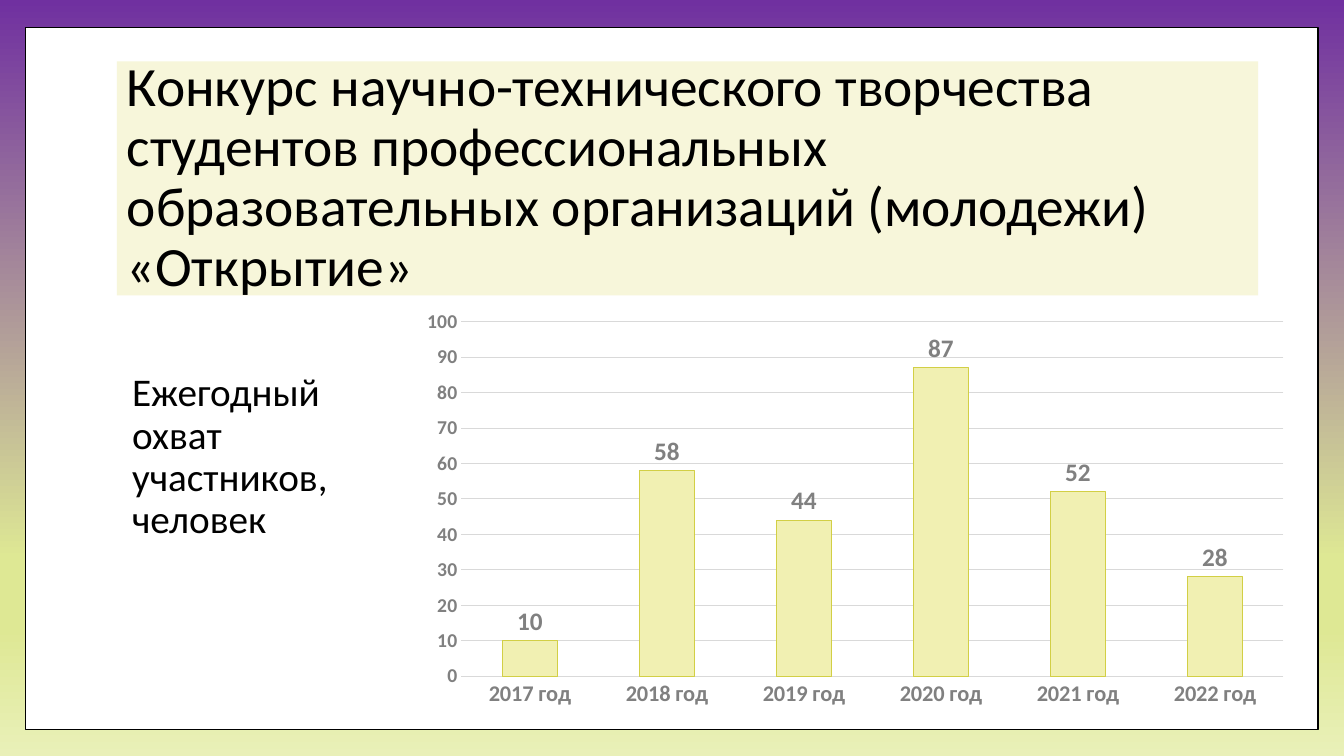
from lxml import etree
from pptx import Presentation
from pptx import util as u
from pptx.chart.data import CategoryChartData
from pptx.dml.color import RGBColor
from pptx.enum import chart as ch, shapes, text
from pptx.oxml import parse_xml

BLACK = RGBColor(0x00, 0x00, 0x00)
WHITE = RGBColor(0xFF, 0xFF, 0xFF)
CREAM = RGBColor(0xF7, 0xF6, 0xDA)
BAR = RGBColor(0xF1, 0xF0, 0xB2)
BAR_EDGE = RGBColor(0xD2, 0xCF, 0x45)
GRAY = RGBColor(0x80, 0x80, 0x80)
GRID = RGBColor(0xD9, 0xD9, 0xD9)
PURPLE = RGBColor(0x70, 0x30, 0xA0)
LIME = RGBColor(0xDE, 0xE8, 0x94)
PALE_LIME = RGBColor(0xE9, 0xF0, 0xB8)
FONT = "Calibri"

prs = Presentation()
prs.slide_width, prs.slide_height = u.Inches(13.33), u.Inches(7.5)
s = prs.slides.add_slide(prs.slide_layouts[6])
COL, ROW = prs.slide_width / 160, prs.slide_height / 90
LEFT, TOP, WIDE, LOWER = 13.92, 7.32, 135.87, 35.88


def cells(col, row, cols, rows):
    return int(col * COL), int(row * ROW), int(cols * COL), int(rows * ROW)


def style(font, size, color, bold=False):
    font.name, font.size, font.bold = FONT, u.Pt(size), bold
    font.color.rgb = color


fill = s.background.fill
fill.gradient()
fill.gradient_angle = 270
stops = s.background._cSld.find(".//{*}gsLst")
for gs in list(stops):
    stops.remove(gs)
ns = "http://schemas.openxmlformats.org/drawingml/2006/main"
for pos, color in [(0, PURPLE), (74, LIME), (83, LIME), (100, PALE_LIME)]:
    stops.append(parse_xml(
        f'<a:gs xmlns:a="{ns}" pos="{pos * 1000}"><a:srgbClr val="{color}"/></a:gs>'))

sp = s.shapes.add_shape(shapes.MSO_SHAPE.RECTANGLE, *cells(3, 3.25, 153.9, 83.6))
sp.shadow.inherit = False
sp.fill.solid()
sp.fill.fore_color.rgb = WHITE
sp.line.color.rgb = BLACK
sp.line.width = u.Pt(1)

sp = s.shapes.add_textbox(*cells(LEFT, TOP, WIDE, 27.84))
sp.fill.solid()
sp.fill.fore_color.rgb = CREAM
tf = sp.text_frame
tf.word_wrap = True
tf.vertical_anchor = text.MSO_ANCHOR.MIDDLE
p = tf.paragraphs[0]
p.line_spacing = 0.9
r = p.add_run()
r.text = ("Конкурс научно-технического творчества студентов профессиональных "
          "образовательных организаций (молодежи) «Открытие»")
style(r.font, 39.6, BLACK)

sp = s.shapes.add_textbox(*cells(LEFT, 43.8, 32, 22))
tf = sp.text_frame
tf.word_wrap = True
tf.margin_left = u.Inches(0.15)
p = tf.paragraphs[0]
p.line_spacing = 0.9
for i, line in enumerate(["Ежегодный", "охват", "участников,", "человек"]):
    if i:
        p.add_line_break()
    r = p.add_run()
    r.text = line
    style(r.font, 28, BLACK)

data = CategoryChartData()
data.categories = [f"{year} год" for year in range(2017, 2023)]
data.add_series("Участники", [10, 58, 44, 87, 52, 28])
chart = s.shapes.add_chart(ch.XL_CHART_TYPE.COLUMN_CLUSTERED,
                           *cells(48.72, LOWER, 106.2, 49.32), data).chart
chart.has_legend = chart.has_title = False
style(chart.font, 10, BLACK)

for axis, size in [(chart.category_axis, 16), (chart.value_axis, 14)]:
    axis.major_tick_mark = axis.minor_tick_mark = ch.XL_TICK_MARK.NONE
    axis.format.line.fill.background()
    style(axis.tick_labels.font, size, GRAY, True)

axis = chart.value_axis
axis.minimum_scale, axis.maximum_scale, axis.major_unit = 0, 100, 10
axis.has_major_gridlines = True
axis.major_gridlines.format.line.color.rgb = GRID
axis.major_gridlines.format.line.width = u.Pt(0.75)

plot = chart.plots[0]
plot.gap_width = 150
plot.vary_by_categories = False
bars = plot.series[0]
bars.format.fill.solid()
bars.format.fill.fore_color.rgb = BAR
bars.format.line.color.rgb = BAR_EDGE
bars.format.line.width = u.Pt(0.75)
labels = bars.data_labels
labels.show_value = True
labels.position = ch.XL_LABEL_POSITION.OUTSIDE_END
style(labels.font, 18, GRAY, True)

prs.save("out.pptx")
